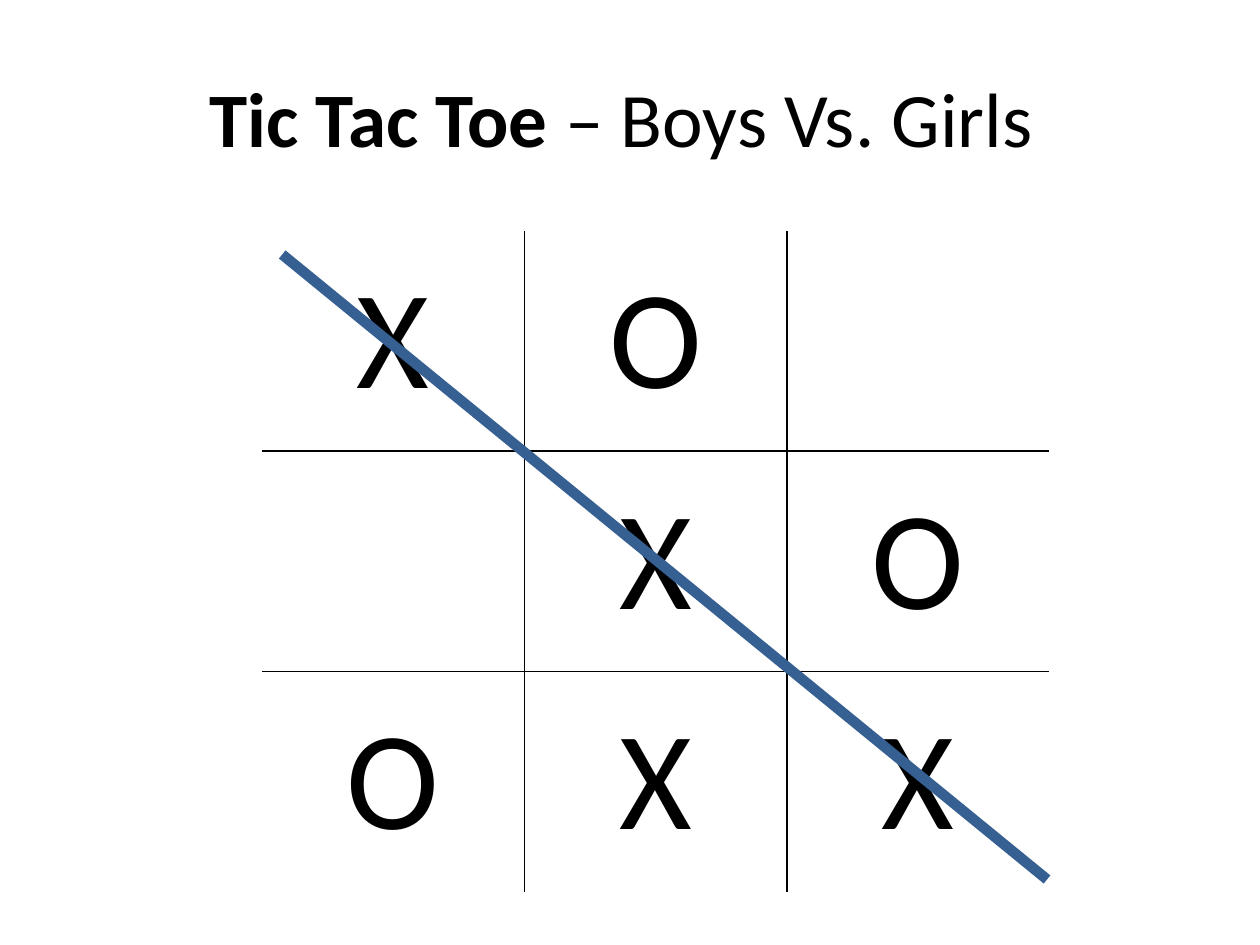
from pptx import Presentation
from pptx.dml.color import RGBColor
from pptx.enum.shapes import MSO_CONNECTOR as Link
from pptx.enum.text import MSO_ANCHOR as Anchor, PP_ALIGN as Align
from pptx.oxml.ns import qn
from pptx.util import Inches, Pt
from lxml.etree import SubElement as Sub

FONT, INK, BLUE = "Calibri", "000000", "376092"
MARKS = ["XO ", " XO", "OXX"]


def tint(part, code):
    """Give a font or line a solid colour."""
    part.fill.solid()
    part.fill.fore_color.rgb = RGBColor.from_string(code)


def style(run, size, bold=False):
    """Format one run of text."""
    font = run.font
    font.name, font.size, font.bold = FONT, Pt(size), bold
    tint(font, INK)


def edge(cell, side, shown):
    """Draw or hide one border of a cell."""
    line = Sub(cell._tc.get_or_add_tcPr(), qn("a:ln" + side), w=str(Pt(1)))
    if shown:
        fill = Sub(line, qn("a:solidFill"))
        Sub(fill, qn("a:srgbClr"), val=INK)
    else:
        Sub(line, qn("a:noFill"))


def title(slide, box):
    """Place the heading with its bold first part."""
    head = slide.shapes.title
    head.left, head.top, head.width, head.height = map(Inches, box)
    frame = head.text_frame
    frame.vertical_anchor = Anchor.MIDDLE
    para = frame.paragraphs[0]
    para.alignment = Align.CENTER
    for text, bold in [("Tic Tac Toe ", True), ("– Boys Vs. Girls ", False)]:
        run = para.add_run()
        run.text = text
        style(run, 44, bold)


def board(slide, box):
    """Place the game grid with inner borders only."""
    last = len(MARKS) - 1
    grid = slide.shapes.add_table(last + 1, last + 1, *map(Inches, box)).table
    grid.first_row = grid.horz_banding = False
    for r, row in enumerate(MARKS):
        for c, mark in enumerate(row):
            cell = grid.cell(r, c)
            cell.vertical_anchor = Anchor.MIDDLE
            sides = {"L": c > 0, "R": c < last, "T": r > 0, "B": r < last}
            for side, shown in sides.items():
                edge(cell, side, shown)
            cell.fill.background()
            cell.text_frame.text = mark.strip()
            para = cell.text_frame.paragraphs[0]
            para.alignment = Align.CENTER
            for run in para.runs:
                style(run, 80)


def strike(slide, box):
    """Draw the winning line from corner to corner of the box."""
    x, y, w, h = box
    ends = map(Inches, (x, y, x + w, y + h))
    link = slide.shapes.add_connector(Link.STRAIGHT, *ends)
    tint(link.line, BLUE)
    link.line.width = Pt(6)
    Sub(link._element.spPr, qn("a:effectLst"))


def main():
    """Build and save the slide."""
    deck = Presentation()
    deck.slide_width, deck.slide_height = Inches(10), Inches(7.5)
    slide = deck.slides.add_slide(deck.slide_layouts[5])
    title(slide, (0.5, 0.3, 9, 1.25))
    board(slide, (2.08, 1.83, 6.25, 5.25))
    strike(slide, (2.24, 2.02, 6.07, 4.96))
    deck.save("out.pptx")


if __name__ == "__main__":
    main()
